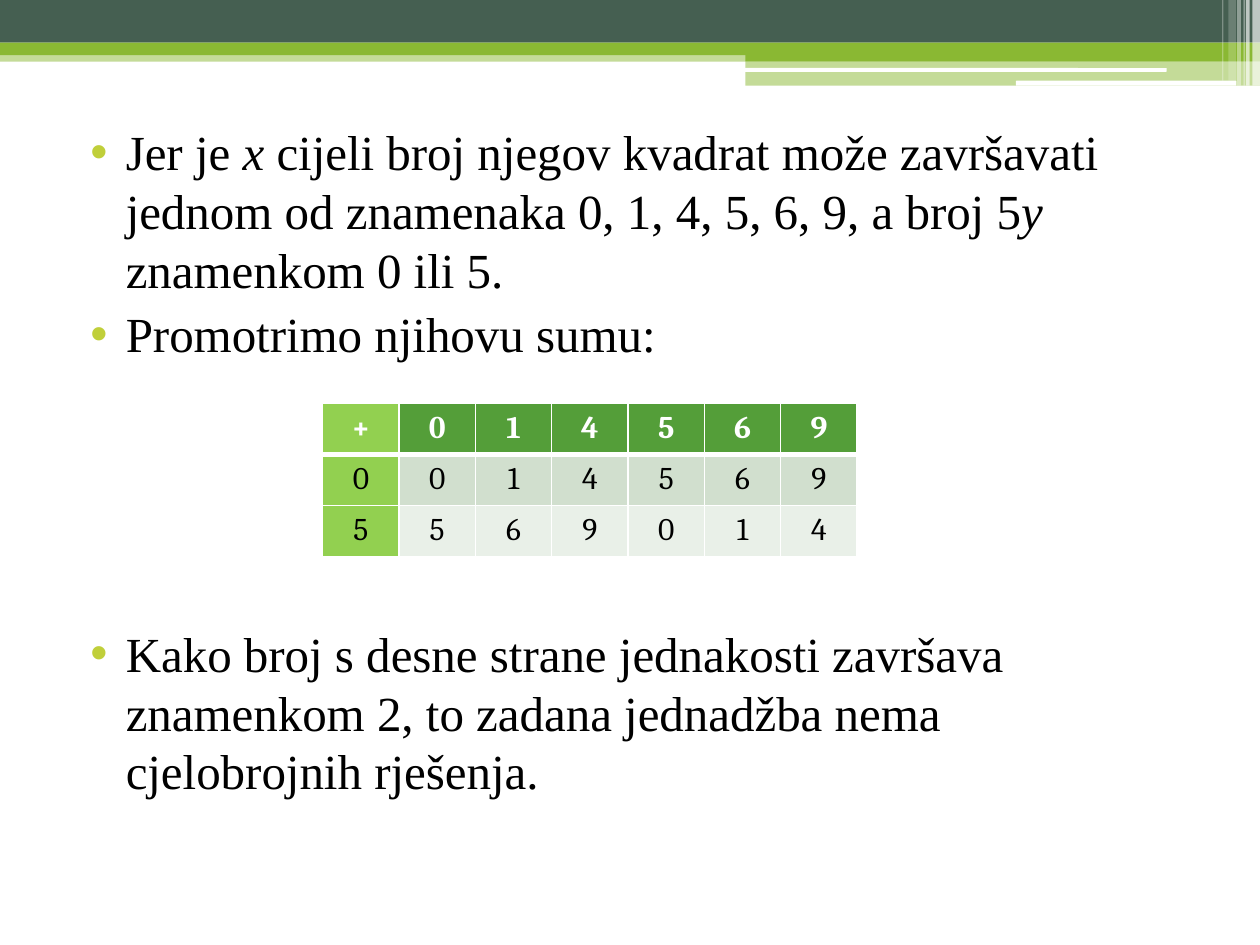
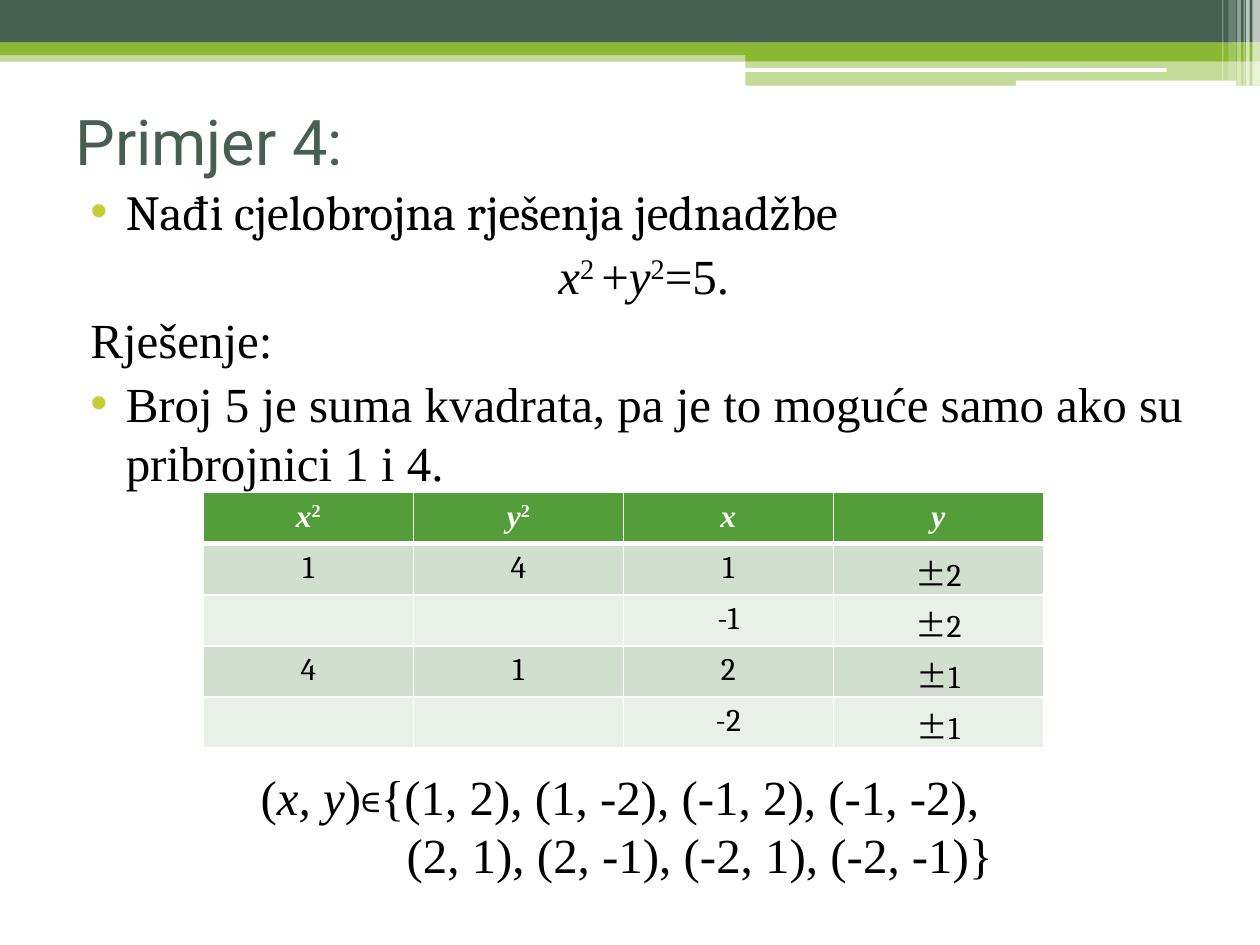
from dataclasses import dataclass
from typing import NamedTuple

from lxml import etree
from pptx import Presentation
from pptx.dml.color import RGBColor
from pptx.enum.shapes import MSO_SHAPE
from pptx.enum.text import MSO_ANCHOR, PP_ALIGN
from pptx.oxml.ns import qn
from pptx.util import Pt

RECTANGLE = MSO_SHAPE.RECTANGLE
ROUNDED = MSO_SHAPE.ROUNDED_RECTANGLE
CENTER, LEFT = PP_ALIGN.CENTER, PP_ALIGN.LEFT
TOP, MIDDLE = MSO_ANCHOR.TOP, MSO_ANCHOR.MIDDLE

COLORS = {
    "dark": "455F51",
    "green": "8AB833",
    "white": "FFFFFF",
    "black": "000000",
    "bullet": "C0CF3A",
    "header": "549E39",
    "corner": "92D050",
    "odd_row": "D1DFCE",
    "even_row": "E9F0E8",
}
SERIF, TABLE_FONT, TITLE_FONT, SIGN_FONT = (
    "Times New Roman", "Cambria", "Roboto", "Noto Sans CJK JP")
BODY_SIZE, TITLE_SIZE, CELL_SIZE = 28, 36, 18
ROW_HEIGHT = 29.2
BODY_MARGIN, BODY_INDENT = 28.8, -20.16


class Area(NamedTuple):
    left: float
    top: float
    width: float
    height: float


@dataclass
class Band:
    area: Area
    color: str
    opacity: int = 100
    kind: MSO_SHAPE = RECTANGLE


@dataclass
class Span:
    text: str
    font: str = SERIF
    italic: bool = False
    raised: bool = False


@dataclass
class Para:
    spans: list[Span]
    bullet: bool = False
    align: PP_ALIGN = LEFT
    space_before: float = 3
    margin: float = BODY_MARGIN
    indent: float = BODY_INDENT
    size: float = BODY_SIZE
    color: str = "black"


@dataclass
class Cell:
    spans: list[Span]
    fill: str


BANDS = [
    Band(Area(0, 28.8, 720, 6.48), "green", 50),
    Band(Area(0, 0, 720, 24.4), "dark"),
    Band(Area(0, 24.4, 720, 7.2), "green"),
    Band(Area(426, 28.1, 294, 6.9), "green"),
    Band(Area(426, 34.8, 294, 14.1), "green", 50),
    Band(Area(425.5, 38.9, 241.2, 2.16), "white", kind=ROUNDED),
    Band(Area(580.5, 46.1, 126, 2.88), "white", kind=ROUNDED),
    Band(Area(715.7, 0, 4.3, 49), "white", 65),
    Band(Area(712, 0, 2.16, 49), "white", 65),
    Band(Area(710.6, 0, 0.72, 49), "white", 60),
    Band(Area(707, 0, 2.16, 49), "white", 40),
    Band(Area(702, 0, 4.3, 46.1), "white", 20),
    Band(Area(698.4, 0, 0.72, 46.1), "white", 30),
]


def rgb(name: str) -> RGBColor:
    return RGBColor.from_string(COLORS[name])


def draw_band(page, band: Band) -> None:
    shape = page.shapes.add_shape(band.kind, *map(Pt, band.area))
    shape.shadow.inherit = False
    shape.line.fill.background()
    shape.fill.solid()
    shape.fill.fore_color.rgb = rgb(band.color)
    if band.opacity < 100:
        color = shape.fill._xPr.find(".//" + qn("a:srgbClr"))
        etree.SubElement(color, qn("a:alpha"), val=str(band.opacity * 1000))


def add_page(deck):
    page = deck.slides.add_slide(deck.slide_layouts[6])
    for band in BANDS:
        draw_band(page, band)
    return page


def write_spans(paragraph, spans: list[Span], size: float, color: str,
                bold: bool = False) -> None:
    for span in spans:
        run = paragraph.add_run()
        run.text = span.text
        font = run.font
        font.name, font.size = span.font, Pt(size)
        font.bold, font.italic = bold, span.italic
        font.color.rgb = rgb(color)
        if span.raised:
            font._element.set("baseline", "30000")


def set_indent(paragraph, para: Para) -> None:
    """Apply the hanging indent and the bullet."""
    properties = paragraph._p.get_or_add_pPr()
    properties.set("marL", str(Pt(para.margin)))
    properties.set("indent", str(Pt(para.indent)))
    if para.bullet:
        color = etree.SubElement(properties, qn("a:buClr"))
        etree.SubElement(color, qn("a:srgbClr"), val=COLORS["bullet"])
        etree.SubElement(properties, qn("a:buFont"), typeface="Arial")
        etree.SubElement(properties, qn("a:buChar"), char="•")


def draw_text(page, area: Area, paras: list[Para],
              anchor: MSO_ANCHOR = TOP) -> None:
    frame = page.shapes.add_textbox(*map(Pt, area)).text_frame
    frame.word_wrap = True
    frame.vertical_anchor = anchor
    for index, para in enumerate(paras):
        paragraph = frame.add_paragraph() if index else frame.paragraphs[0]
        paragraph.alignment = para.align
        paragraph.space_before = Pt(para.space_before)
        set_indent(paragraph, para)
        write_spans(paragraph, para.spans, para.size, para.color)


def set_borders(cell, top: float, bottom: float) -> None:
    properties = cell._tc.get_or_add_tcPr()
    sides = {"lnL": 1, "lnR": 1, "lnT": top, "lnB": bottom}
    for position, (side, width) in enumerate(sides.items()):
        line = etree.Element(qn("a:" + side), w=str(Pt(width)))
        fill = etree.SubElement(line, qn("a:solidFill"))
        etree.SubElement(fill, qn("a:srgbClr"), val=COLORS["white"])
        properties.insert(position, line)


def draw_table(page, left: float, top: float, column_width: float,
               rows: list[list[Cell]]) -> None:
    columns = len(rows[0])
    table = page.shapes.add_table(
        len(rows), columns, Pt(left), Pt(top),
        Pt(column_width * columns), Pt(ROW_HEIGHT * len(rows))).table
    table.horz_banding = False
    for column in table.columns:
        column.width = Pt(column_width)
    for row_index, row in enumerate(rows):
        table.rows[row_index].height = Pt(ROW_HEIGHT)
        is_header = row_index == 0
        for column_index, content in enumerate(row):
            cell = table.cell(row_index, column_index)
            cell.fill.solid()
            cell.fill.fore_color.rgb = rgb(content.fill)
            set_borders(cell, top=3 if row_index == 1 else 1,
                        bottom=3 if is_header else 1)
            paragraph = cell.text_frame.paragraphs[0]
            paragraph.alignment = CENTER
            write_spans(paragraph, content.spans, CELL_SIZE,
                        "white" if is_header else "black", bold=is_header)


def row_fill(row: int) -> str:
    if row == 0:
        return "header"
    return "odd_row" if row % 2 else "even_row"


def cell_spans(text: str) -> list[Span]:
    """Set a leading plus-minus sign in its own font."""
    if text.startswith("±"):
        return [Span("±", SIGN_FONT), Span(text[1:], TABLE_FONT)]
    return [Span(text, TABLE_FONT)] if text else []


def build_sum_page(deck) -> None:
    page = add_page(deck)
    draw_text(page, Area(36, 66.2, 648, 451.4), [
        Para([Span("Jer je "), Span("x", italic=True),
              Span(" cijeli broj njegov kvadrat može završavati jednom od "
                   "znamenaka 0, 1, 4, 5, 6, 9, a broj 5"),
              Span("y ", italic=True), Span("znamenkom 0 ili 5.")],
             bullet=True),
        Para([Span("Promotrimo njihovu sumu:")], bullet=True),
        Para([Span("Kako broj s desne strane jednakosti završava znamenkom "
                   "2, to zadana jednadžba nema cjelobrojnih rješenja.")],
             bullet=True, space_before=149),
    ])
    endings = [0, 1, 4, 5, 6, 9]
    grid = [["+", *endings]]
    grid += [[addend, *((addend + ending) % 10 for ending in endings)]
             for addend in (0, 5)]
    draw_table(page, 184.4, 230.6, 43.63, [
        [Cell(cell_spans(str(value)), row_fill(row) if column else "corner")
         for column, value in enumerate(values)]
        for row, values in enumerate(grid)])


def build_example_page(deck) -> None:
    page = add_page(deck)
    x, y = Span("x", italic=True), Span("y", italic=True)
    square = Span("2", raised=True)
    draw_text(page, Area(36, 54.7, 648, 51.1), [
        Para([Span("Primjer 4:", TITLE_FONT)], space_before=0, margin=0,
             indent=0, size=TITLE_SIZE, color="dark")], MIDDLE)
    draw_text(page, Area(36, 100.1, 648, 417.6), [
        Para([Span("Nađi cjelobrojna rješenja jednadžbe", TABLE_FONT)],
             bullet=True),
        Para([x, Span("2 ", raised=True), Span("+"), y, square, Span("=5.")],
             align=CENTER, indent=-13),
        Para([Span("Rješenje:")]),
        Para([Span("Broj 5 je suma kvadrata, pa je to moguće samo ako su "
                   "pribrojnici 1 i 4.")], bullet=True),
    ])
    header = [[x, square], [y, square], [x], [y]]
    solutions = [["1", "4", "1", "±2"], ["", "", "-1", "±2"],
                 ["4", "1", "2", "±1"], ["", "", "-2", "±1"]]
    grid = [header] + [[cell_spans(text) for text in row]
                       for row in solutions]
    draw_table(page, 116.2, 281.5, 120, [
        [Cell(spans, row_fill(row)) for spans in cells]
        for row, cells in enumerate(grid)])
    draw_text(page, Area(93.6, 434.2, 521.3, 74.9), [
        Para([Span("("), Span("x, y", italic=True),
              Span(")∊{(1, 2), (1, -2), (-1, 2), (-1, -2),")],
             align=CENTER, space_before=0, margin=0, indent=0),
        Para([Span("(2, 1), (2, -1), (-2, 1), (-2, -1)}")],
             align=CENTER, space_before=0, margin=91, indent=0),
    ])


def main() -> None:
    deck = Presentation()
    deck.slide_width, deck.slide_height = Pt(720), Pt(540)
    build_sum_page(deck)
    build_example_page(deck)
    deck.save("out.pptx")


if __name__ == "__main__":
    main()
